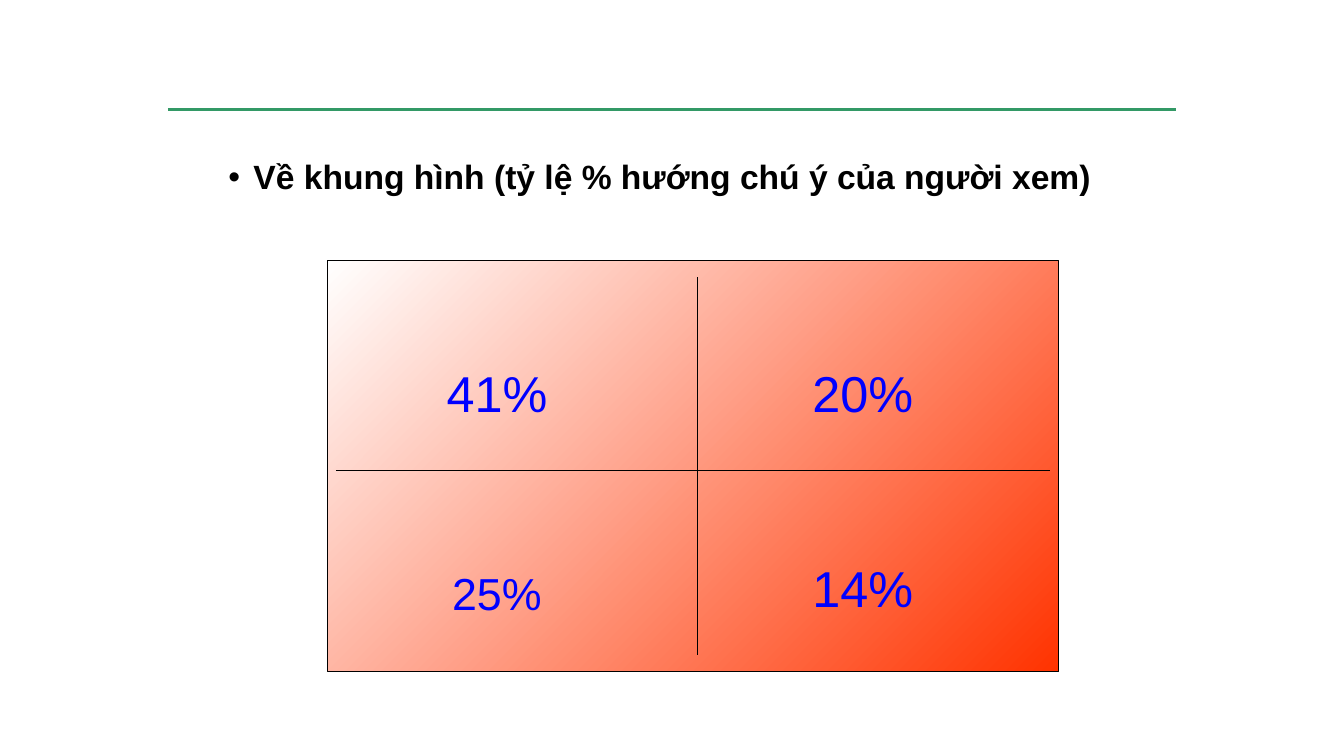
from dataclasses import dataclass

from lxml.etree import SubElement
from pptx import Presentation
from pptx.dml.color import RGBColor
from pptx.enum.shapes import MSO_CONNECTOR, MSO_SHAPE
from pptx.enum.text import PP_ALIGN
from pptx.oxml.ns import qn
from pptx.slide import Slide
from pptx.util import Pt


@dataclass(frozen=True)
class Rule:
    left: float
    top: float
    right: float
    low: float
    tint: str = "000000"
    weight: float = 0.75


@dataclass(frozen=True)
class Share:
    text: str
    mid: float
    top: float
    size: float = 36


LEFT, TOP, WIDTH, HEIGHT = 234, 186, 522, 294
CROSS_X, CROSS_Y = 498, 336
SIDE_GAP, END_GAP = 6, 12
WEST, EAST = 355, 616.3

RULES = [
    Rule(120, 78, 840, 78, "339966", 2.25),
    Rule(LEFT + SIDE_GAP, CROSS_Y, LEFT + WIDTH - SIDE_GAP, CROSS_Y),
    Rule(CROSS_X, TOP + END_GAP, CROSS_X, TOP + HEIGHT - END_GAP),
]
SHARES = [
    Share("41%", WEST, 252),
    Share("20%", EAST, 252),
    Share("14%", EAST, 391.7),
    Share("25%", WEST, 397.4, 32),
]


def paint(tint: str) -> RGBColor:
    return RGBColor.from_string(tint)


def write(slide: Slide, text: str, *, left: float, top: float, width: float,
          height: float, size: float, tint: str, bold: bool = False,
          align: PP_ALIGN = PP_ALIGN.LEFT, inset: float = 3.6,
          space: float = 1, bullet: bool = False) -> None:
    box = slide.shapes.add_textbox(Pt(left), Pt(top), Pt(width), Pt(height))
    frame = box.text_frame
    frame.word_wrap = True
    frame.margin_top = Pt(inset)
    frame.margin_bottom = 0
    para = frame.paragraphs[0]
    para.text = text
    para.alignment = align
    para.line_spacing = space
    if bullet:
        props = para._p.get_or_add_pPr()
        props.set("marL", str(Pt(18)))
        props.set("indent", str(-Pt(18)))
        SubElement(props, qn("a:buFont")).set("typeface", "Arial")
        SubElement(props, qn("a:buChar")).set("char", "•")
    font = para.runs[0].font
    font.name = "Arial"
    font.size = Pt(size)
    font.bold = bold
    font.color.rgb = paint(tint)


def rule(slide: Slide, item: Rule) -> None:
    line = slide.shapes.add_connector(
        MSO_CONNECTOR.STRAIGHT, Pt(item.left), Pt(item.top),
        Pt(item.right), Pt(item.low))
    line.line.color.rgb = paint(item.tint)
    line.line.width = Pt(item.weight)
    SubElement(line._element.spPr, qn("a:effectLst"))


def panel(slide: Slide) -> None:
    shape = slide.shapes.add_shape(
        MSO_SHAPE.RECTANGLE, Pt(LEFT), Pt(TOP), Pt(WIDTH), Pt(HEIGHT))
    shape.shadow.inherit = False
    shape.fill.gradient()
    shape.fill.gradient_angle = 315
    for stop, place, tint in zip(shape.fill.gradient_stops, (0, 1), ("FFFFFF", "FF3300")):
        stop.position = place
        stop.color.rgb = paint(tint)
    shape.line.color.rgb = paint("000000")
    shape.line.width = Pt(0.75)


def main() -> None:
    deck = Presentation()
    deck.slide_width, deck.slide_height = Pt(960), Pt(540)
    slide = deck.slides.add_slide(deck.slide_layouts[6])
    write(slide, "Về khung hình (tỷ lệ % hướng chú ý của người xem)",
          left=156, top=111, width=654, height=36, size=24,
          tint="000000", bold=True, space=0.9, bullet=True)
    panel(slide)
    for share in SHARES:
        write(slide, share.text, left=share.mid - 43.2, top=share.top,
              width=86.4, height=share.size * 1.4, size=share.size,
              tint="0000FF", align=PP_ALIGN.CENTER, inset=6.5)
    for item in RULES:
        rule(slide, item)
    deck.save("out.pptx")


if __name__ == "__main__":
    main()
